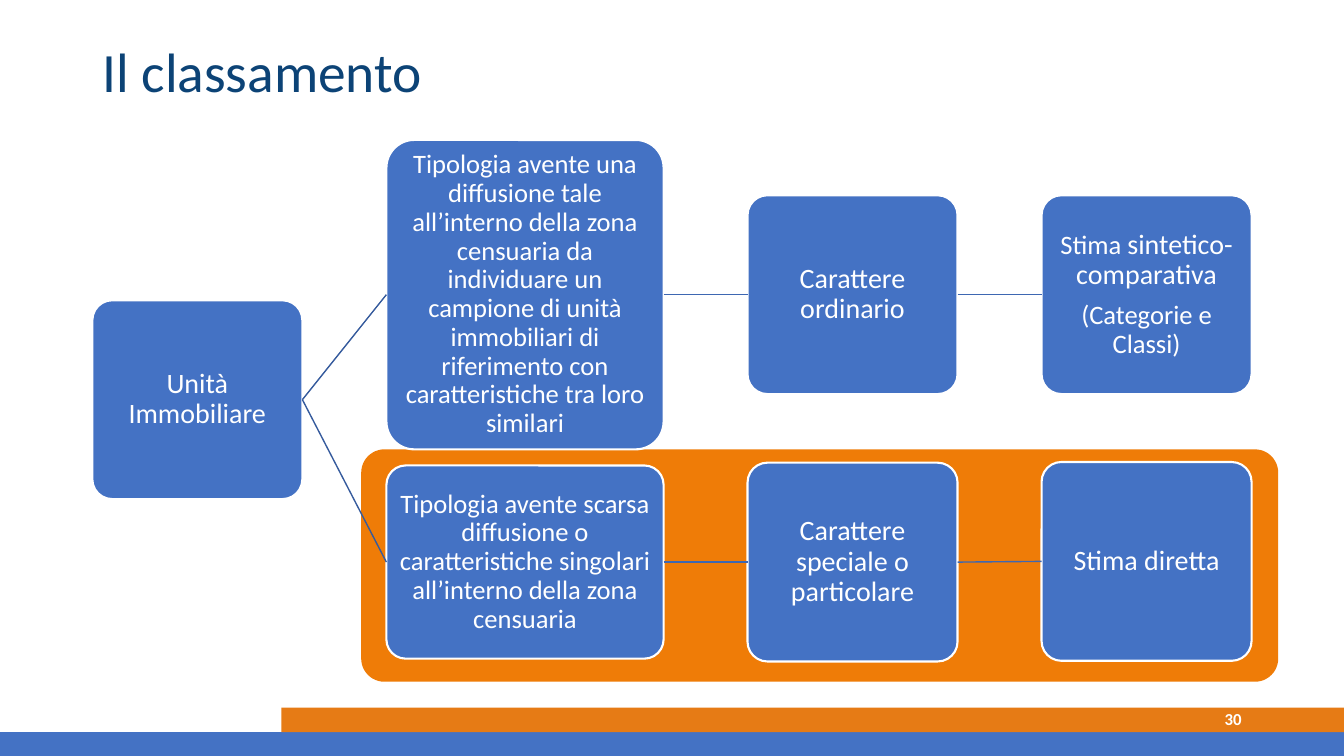
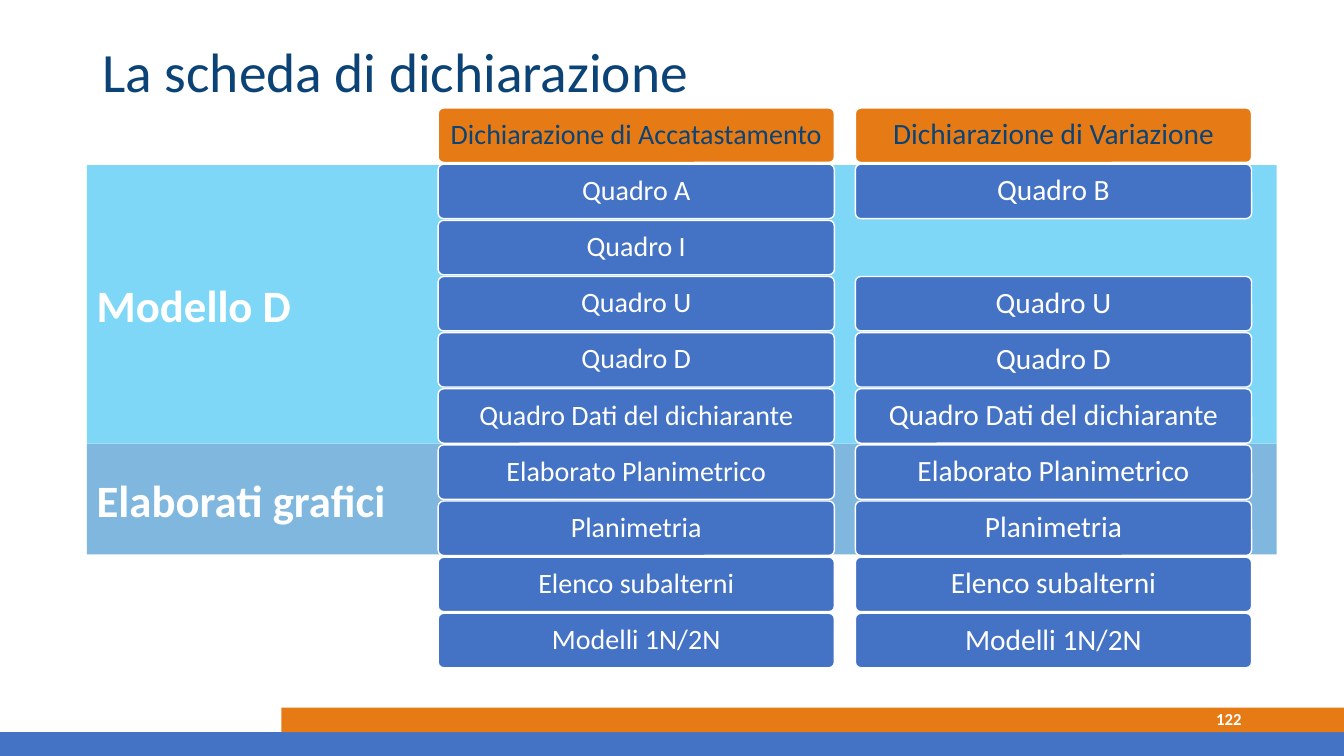
from pptx import Presentation
from pptx.dml.color import RGBColor
from pptx.enum.shapes import MSO_CONNECTOR, MSO_SHAPE
from pptx.enum.text import MSO_ANCHOR, MSO_AUTO_SIZE, PP_ALIGN
from pptx.oxml.ns import qn
from pptx.util import Pt
from lxml.etree import SubElement

FONT = "Calibri"
COLORS = {
    "blue": "4472C4", "orange": "E67B15", "panel": "EF7C07", "navy": "0C4376",
    "white": "FFFFFF", "branch": "365B9D", "link": "3E67B2",
    "sky": "00B0F0", "azure": "0070C0",
}
TITLE_BOX = (66, 29, 828, 48)
NUMBER_BOX = (678, 499, 216, 29)
FOOTER_BANDS = [("blue", (0, 523, 960, 17)), ("orange", (201, 505.5, 759, 17.5))]

FLOW_TITLE = ("Il classamento", "30")
PANEL_BOX = (258, 321, 655, 166)
COLUMN_WIDTHS = [150, 198, 150, 150]
COLUMN_LEFT, COLUMN_GAP = 66, 60
ROOT = (0, 285.5, 142, [[("Unità Immobiliare", 20)]])
BRANCHES = [
    [
        (1, 210.5, 221, [[("Tipologia avente una diffusione tale all’interno della zona "
                           "censuaria da individuare un campione di unità immobiliari di "
                           "riferimento con caratteristiche tra loro similari", 19)]]),
        (2, 210.5, 142, [[("Carattere ordinario", 20)]]),
        (3, 210.5, 142, [[("Stima ", 19), ("sintetico-comparativa", 20)],
                         [("(Categorie e Classi)", 19)]]),
    ],
    [
        (1, 401.5, 138, [[("Tipologia avente scarsa diffusione o caratteristiche singolari "
                           "all’interno della zona censuaria", 19)]]),
        (2, 401.5, 142, [[("Carattere speciale o particolare", 20)]]),
        (3, 401, 142, [[("Stima diretta", 20)]]),
    ],
]

FORM_TITLE = ("La scheda di dichiarazione", "122")
GROUPS = [("Modello D", "sky", 118, 199), ("Elaborati grafici", "azure", 317, 79)]
GROUP_LEFT, GROUP_WIDTH = 62, 850
COMMON_ROWS = ["Quadro U", "Quadro D", "Quadro Dati del dichiarante",
               "Elaborato Planimetrico", "Planimetria", "Elenco subalterni", "Modelli 1N/2N"]
LISTS = [
    (313, 20, ["Dichiarazione di Accatastamento", "Quadro A", "Quadro I"] + COMMON_ROWS),
    (611, 21, ["Dichiarazione di Variazione", "Quadro B", None] + COMMON_ROWS),
]
ROW_TOP, ROW_PITCH, ROW_HEIGHT, ROW_WIDTH = 77.2, 40.1, 38.9, 283


def rgb(name):
    return RGBColor.from_string(COLORS[name])


def pts(box):
    return [Pt(v) for v in box]


def apply(obj, values):
    for name, value in values.items():
        setattr(obj, name, value)


def write(sp, paragraphs, color="white", align=PP_ALIGN.CENTER, bold=False,
          spacing=0.9, inset=(0.75, 0.75)):
    tf = sp.text_frame
    side, edge = pts(inset)
    apply(tf, {"word_wrap": True, "auto_size": MSO_AUTO_SIZE.NONE,
               "vertical_anchor": MSO_ANCHOR.MIDDLE, "margin_left": side,
               "margin_right": side, "margin_top": edge, "margin_bottom": edge})
    for i, runs in enumerate(paragraphs):
        p = tf.add_paragraph() if i else tf.paragraphs[0]
        apply(p, {"alignment": align, "line_spacing": spacing,
                  "space_before": Pt(8 if i else 0)})
        for text, size in runs:
            r = p.add_run()
            r.text = text
            apply(r.font, {"name": FONT, "size": Pt(size), "bold": bold})
            r.font.color.rgb = rgb(color)


def add_box(slide, box, fill, kind=MSO_SHAPE.RECTANGLE, line=0):
    sp = slide.shapes.add_shape(kind, *pts(box))
    sp.shadow.inherit = False
    sp.fill.solid()
    sp.fill.fore_color.rgb = rgb(fill)
    if kind == MSO_SHAPE.ROUNDED_RECTANGLE:
        sp.adjustments[0] = 0.1
    if line:
        sp.line.color.rgb = rgb("white")
        sp.line.width = Pt(line)
    else:
        sp.line.fill.background()
    return sp


def add_link(slide, start, end, color):
    cx = slide.shapes.add_connector(MSO_CONNECTOR.STRAIGHT, 0, 0, 0, 0)
    cx.begin_connect(start, 3)
    cx.end_connect(end, 1)
    cx.line.color.rgb = rgb(color)
    cx.line.width = Pt(1)
    SubElement(cx.element.spPr, qn("a:effectLst"))


def set_layout(layout, slide):
    apply(layout.placeholders[0], dict(zip(("left", "top", "width", "height"), pts(TITLE_BOX))))
    for color, box in FOOTER_BANDS:
        layout.shapes.element.append(add_box(slide, box, color).element)


def start_slide(prs, title, number):
    layout = prs.slide_layouts[5]
    first = len(prs.slides) == 0
    slide = prs.slides.add_slide(layout)
    if first:
        set_layout(layout, slide)
    write(slide.shapes.title, [[(title, 39.6)]], "navy", PP_ALIGN.LEFT, inset=(7.2, 3.6))
    sp = slide.shapes.add_textbox(*pts(NUMBER_BOX))
    write(sp, [[(number, 12)]], align=PP_ALIGN.RIGHT, bold=True, spacing=1, inset=(7.2, 3.6))
    return slide


def add_node(slide, column, middle, height, paragraphs):
    left = COLUMN_LEFT + sum(COLUMN_WIDTHS[:column]) + column * COLUMN_GAP
    box = (left, middle - height / 2, COLUMN_WIDTHS[column], height)
    sp = add_box(slide, box, "blue", MSO_SHAPE.ROUNDED_RECTANGLE, 1.5)
    write(sp, paragraphs)
    return sp


def build_flow(prs):
    slide = start_slide(prs, *FLOW_TITLE)
    add_box(slide, PANEL_BOX, "panel", MSO_SHAPE.ROUNDED_RECTANGLE)
    root = add_node(slide, *ROOT)
    for branch in BRANCHES:
        previous, color = root, "branch"
        for node in branch:
            sp = add_node(slide, *node)
            add_link(slide, previous, sp, color)
            previous, color = sp, "link"


def build_form(prs):
    slide = start_slide(prs, *FORM_TITLE)
    for label, color, top, height in GROUPS:
        sp = add_box(slide, (GROUP_LEFT, top, GROUP_WIDTH, height), color)
        SubElement(sp.element.spPr.find(".//" + qn("a:srgbClr")), qn("a:alpha"), val="50000")
        write(sp, [[(label, 32)]], align=PP_ALIGN.LEFT, bold=True, spacing=1, inset=(7.2, 3.6))
    for left, size, rows in LISTS:
        for i, label in enumerate(rows):
            if label is None:
                continue
            box = (left, ROW_TOP + i * ROW_PITCH, ROW_WIDTH, ROW_HEIGHT)
            fill, color = ("blue", "white") if i else ("orange", "navy")
            sp = add_box(slide, box, fill, MSO_SHAPE.ROUNDED_RECTANGLE, 1)
            write(sp, [[(label, size)]], color, inset=(3, 3))


def main():
    prs = Presentation()
    prs.slide_width, prs.slide_height = Pt(960), Pt(540)
    build_flow(prs)
    build_form(prs)
    prs.save("out.pptx")


if __name__ == "__main__":
    main()
